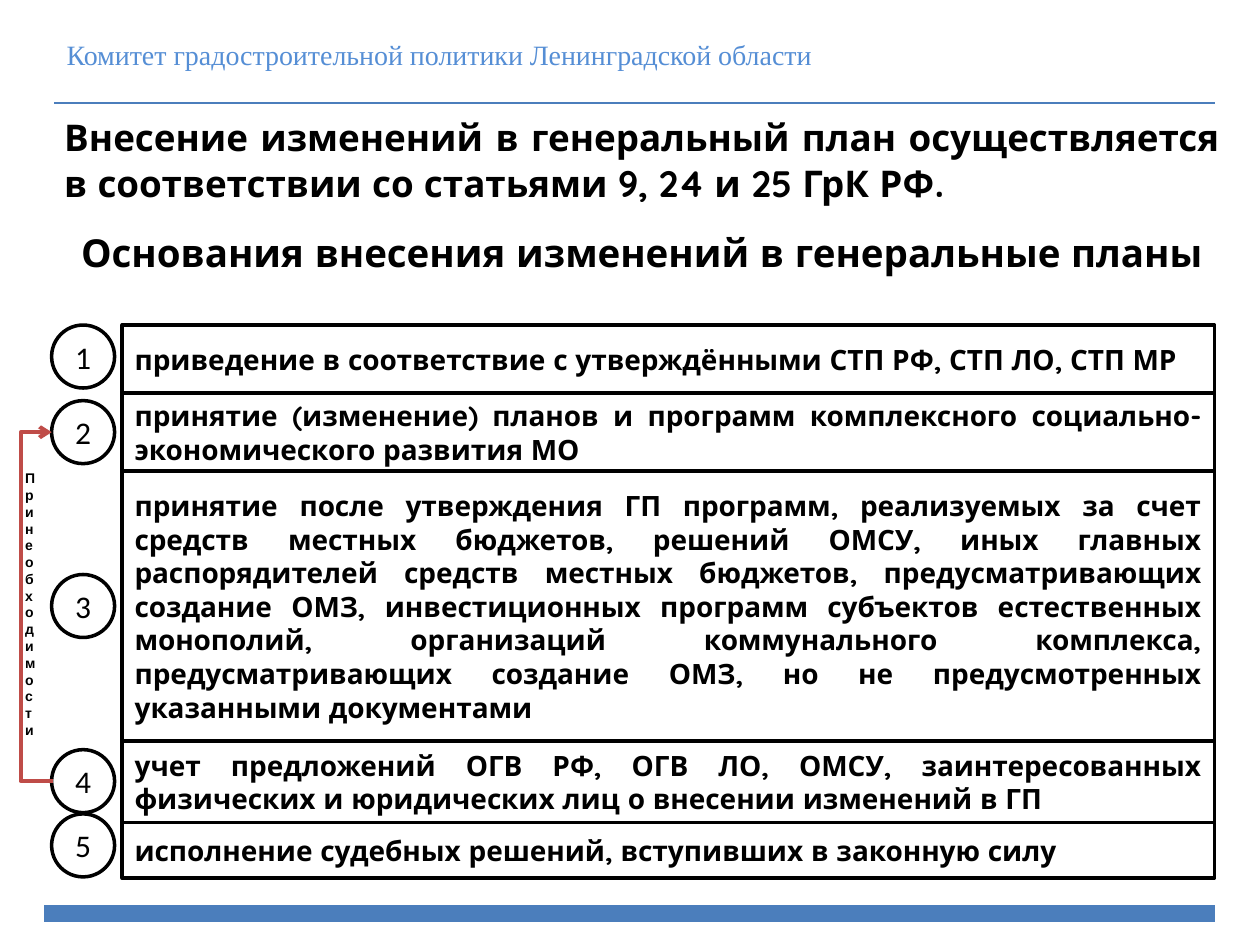
from lxml.etree import SubElement
from pptx import Presentation
from pptx.dml.color import RGBColor
from pptx.enum.shapes import MSO_CONNECTOR, MSO_SHAPE
from pptx.enum.text import MSO_ANCHOR, MSO_AUTO_SIZE, PP_ALIGN
from pptx.oxml.ns import qn
from pptx.util import Inches, Pt

COLORS = {"text": "000000", "paper": "FFFFFF", "header": "558ED5",
          "rule": "4B7EBC", "arrow": "BF4C48"}

# Row height, top of its number, wording
GROUNDS = [
    (0.54, 2.58, "приведение в соответствие с утверждёнными СТП РФ, СТП ЛО, СТП МР"),
    (0.62, 3.18, "принятие (изменение) планов и программ комплексного "
                 "социально-экономического развития МО"),
    (2.14, 4.56, "принятие после утверждения ГП программ, реализуемых за счет средств "
                 "местных бюджетов, решений ОМСУ, иных главных распорядителей средств "
                 "местных бюджетов, предусматривающих создание ОМЗ, инвестиционных "
                 "программ субъектов естественных монополий, организаций коммунального "
                 "комплекса, предусматривающих создание ОМЗ, но не предусмотренных "
                 "указанными документами"),
    (0.65, 5.95, "учет предложений ОГВ РФ, ОГВ ЛО, ОМСУ, заинтересованных физических "
                 "и юридических лиц о внесении изменений в ГП"),
    (0.44, 6.46, "исполнение судебных решений, вступивших в законную силу"),
]
NUMBER_SIZE = 0.5


def rgb(name):
    return RGBColor.from_string(COLORS[name])


def write(paragraph, text, size=16, font="Quicksand", color="text", bold=True,
          align=PP_ALIGN.LEFT):
    paragraph.alignment = align
    run = paragraph.add_run()
    run.text = text
    run.font.size = Pt(size)
    run.font.name = font
    run.font.bold = bold
    run.font.color.rgb = rgb(color)


def add_text_box(slide, box, text, side_inset=0.1, **style):
    frame = slide.shapes.add_textbox(*map(Inches, box)).text_frame
    frame.word_wrap = True
    frame.margin_left = frame.margin_right = Inches(side_inset)
    write(frame.paragraphs[0], text, **style)


def add_outlined(slide, preset, box, text, **style):
    outlined = slide.shapes.add_shape(preset, *map(Inches, box))
    outlined.shadow.inherit = False
    outlined.fill.solid()
    outlined.fill.fore_color.rgb = rgb("paper")
    outlined.line.color.rgb = rgb("text")
    outlined.line.width = Pt(2)
    frame = outlined.text_frame
    frame.word_wrap = True
    frame.vertical_anchor = MSO_ANCHOR.MIDDLE
    write(frame.paragraphs[0], text, **style)


def add_line(slide, start, end, color, width, kind=MSO_CONNECTOR.STRAIGHT):
    line = slide.shapes.add_connector(kind, *map(Inches, start + end))
    line.line.color.rgb = rgb(color)
    line.line.width = Pt(width)
    SubElement(line._element.spPr, qn("a:effectLst"))
    return line


def add_page_frame(slide, left, right):
    add_text_box(slide, (left, 0.25, right - left, 0.37),
                 "Комитет градостроительной политики Ленинградской области",
                 font="Times New Roman", color="header", bold=False)
    add_line(slide, (left, 0.82), (right, 0.82), "rule", 1)
    add_line(slide, (0.35, 7.25), (right, 7.25), "rule", 10)


def add_heading(slide, box):
    title = slide.shapes.title
    title.left, title.top, title.width, title.height = map(Inches, box)
    frame = title.text_frame
    frame.word_wrap = True
    frame.auto_size = MSO_AUTO_SIZE.NONE
    frame.vertical_anchor = MSO_ANCHOR.TOP
    basis = frame.paragraphs[0]
    write(basis, "Внесение изменений в генеральный план осуществляется "
                 "в соответствии со статьями 9, 24 и 25 ГрК РФ",
          size=21, align=PP_ALIGN.JUSTIFY)
    write(basis, ".", size=22, align=PP_ALIGN.JUSTIFY)
    subject = frame.add_paragraph()
    subject.space_before = Pt(14)
    write(subject, "Основания внесения изменений в генеральные планы",
          size=22, align=PP_ALIGN.CENTER)


def add_grounds(slide, left, top, width):
    for number, (height, number_top, wording) in enumerate(GROUNDS, 1):
        add_outlined(slide, MSO_SHAPE.RECTANGLE, (left, top, width, height),
                     wording, align=PP_ALIGN.JUSTIFY)
        add_outlined(slide, MSO_SHAPE.OVAL,
                     (left - 0.56, number_top, NUMBER_SIZE, NUMBER_SIZE),
                     str(number), size=18, font="Calibri", bold=False,
                     align=PP_ALIGN.CENTER)
        top += height


def add_return_arrow(slide, left, right):
    # Runs from number 4 back to number 2, turned half round to bend left
    target, source = (GROUNDS[i][1] + NUMBER_SIZE / 2 for i in (1, 3))
    step = 0.01
    arrow = add_line(slide, (right, target), (right + step, source), "arrow", 2.25,
                     MSO_CONNECTOR.ELBOW)
    arrow._element.spPr.find(qn("a:xfrm")).set("rot", "10800000")
    bend = round((right + step - left) / step * 100000)
    guides = arrow._element.spPr.find(qn("a:prstGeom")).find(qn("a:avLst"))
    SubElement(guides, qn("a:gd"), name="adj1", fmla=f"val {bend}")
    SubElement(arrow.line._get_or_add_ln(), qn("a:tailEnd"), type="arrow")
    # One letter per line beside the arrow
    add_text_box(slide, (left + 0.04, target + 0.25, 0.08, 2.39),
                 "При необходимости", side_inset=0, size=8, font="Arial")


def main():
    deck = Presentation()
    deck.slide_width, deck.slide_height = Inches(10), Inches(7.5)
    slide = deck.slides.add_slide(deck.slide_layouts[5])
    add_page_frame(slide, 0.43, 9.64)
    add_heading(slide, (0.41, 0.86, 9.37, 1.36))
    add_grounds(slide, 0.97, 2.58, 8.67)
    add_return_arrow(slide, 0.16, 0.41)
    deck.save("out.pptx")


if __name__ == "__main__":
    main()
